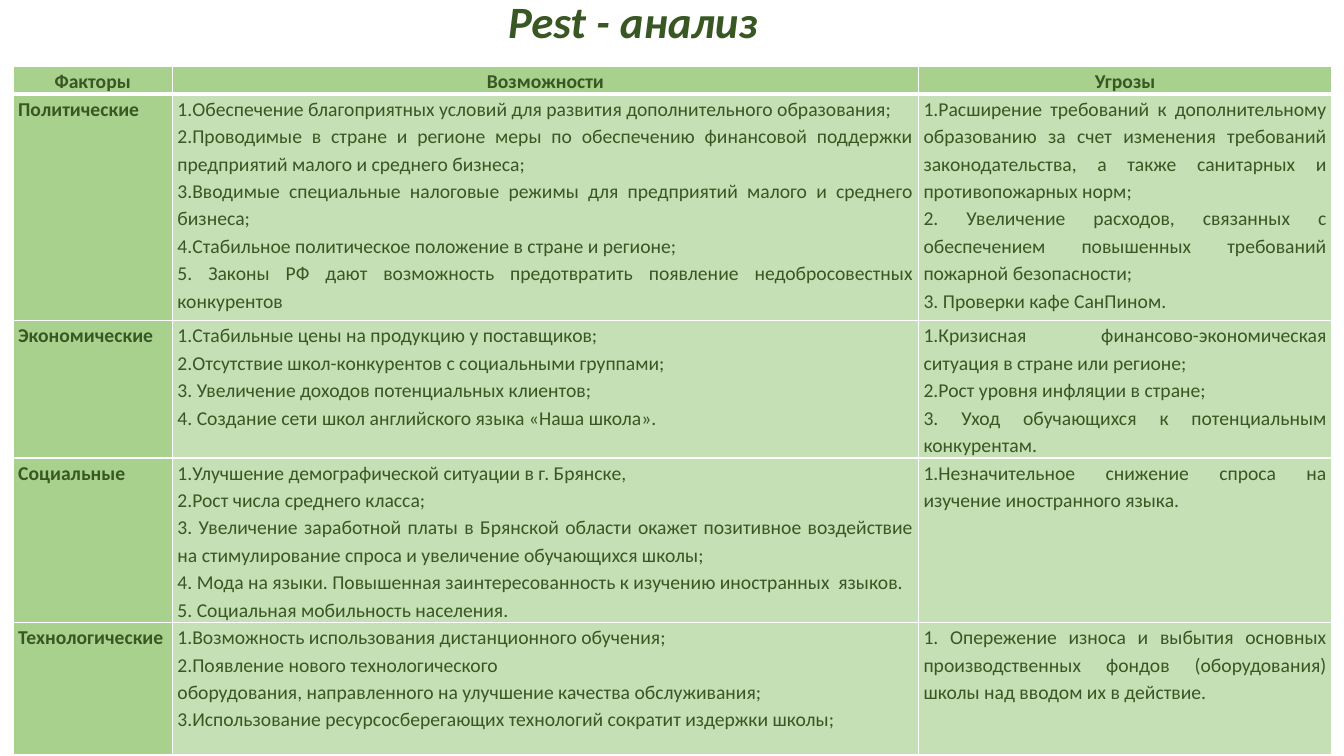
from dataclasses import dataclass

from lxml.etree import SubElement
from pptx import Presentation
from pptx.dml.color import RGBColor as RGB
from pptx.enum.text import MSO_ANCHOR as Anchor, MSO_AUTO_SIZE as AutoSize, PP_ALIGN as Align
from pptx.oxml.ns import qn
from pptx.util import Inches, Pt


@dataclass(frozen=True)
class Theme:
    font: str = "Calibri"
    ink: str = "385723"
    strong_fill: str = "A9D18E"
    soft_fill: str = "C5E0B4"
    border: str = "FFFFFF"
    title_size: int = 32
    body_size: int = 14
    thin: int = 1
    thick: int = 3


THEME = Theme()
SLIDE_W, SLIDE_H = 13.33, 7.5

# Table grid in inches
TABLE_LEFT, TABLE_TOP = 0.13, 0.66
COLUMNS = [1.58, 7.4, 4.1]
ROWS = [0.19, 2.25] + [1.31] * 3

HEADERS = ["Факторы", "Возможности", "Угрозы"]

# Factor, opportunities, threats
FACTORS = [
    ("Политические",
     ["1.Обеспечение благоприятных условий для развития дополнительного образования;",
      "2.Проводимые в стране и регионе меры по обеспечению финансовой поддержки "
      "предприятий малого и среднего бизнеса;",
      "3.Вводимые специальные налоговые режимы для предприятий малого и среднего бизнеса;",
      "4.Стабильное политическое положение в стране и регионе;",
      "5. Законы РФ дают возможность предотвратить появление недобросовестных конкурентов"],
     ["1.Расширение требований к дополнительному образованию за счет изменения требований "
      "законодательства, а также санитарных и противопожарных норм;",
      "2. Увеличение расходов, связанных с обеспечением повышенных требований "
      "пожарной безопасности;",
      "3. Проверки кафе СанПином."]),
    ("Экономические",
     ["1.Стабильные цены на продукцию у поставщиков;",
      "2.Отсутствие школ-конкурентов с социальными группами;",
      "3. Увеличение доходов потенциальных клиентов;",
      "4. Создание сети школ английского языка «Наша школа»."],
     ["1.Кризисная финансово-экономическая ситуация в стране или регионе;",
      "2.Рост уровня инфляции в стране;",
      "3. Уход обучающихся к потенциальным конкурентам."]),
    ("Социальные",
     ["1.Улучшение демографической ситуации в г. Брянске,",
      "2.Рост числа среднего класса;",
      "3. Увеличение заработной платы в Брянской области окажет позитивное воздействие "
      "на стимулирование спроса и увеличение обучающихся школы;",
      "4. Мода на языки. Повышенная заинтересованность к изучению иностранных  языков.",
      "5. Социальная мобильность населения."],
     ["1.Незначительное снижение спроса на изучение иностранного языка."]),
    ("Технологические",
     ["1.Возможность использования дистанционного обучения;",
      "2.Появление нового технологического",
      "оборудования, направленного на улучшение качества обслуживания;",
      "3.Использование ресурсосберегающих технологий сократит издержки школы;"],
     ["1. Опережение износа и выбытия основных производственных фондов (оборудования) "
      "школы над вводом их в действие."]),
]


def write_text(tf, lines, size=THEME.body_size, bold=False, italic=False,
               align=Align.JUSTIFY, spacing=1.15):
    """Fill a text frame, one paragraph per line."""
    for i, line in enumerate(lines):
        p = tf.paragraphs[0] if i == 0 else tf.add_paragraph()
        p.alignment, p.line_spacing = align, spacing
        p.space_before = p.space_after = Pt(0)
        r = p.add_run()
        r.text = line
        font = r.font
        font.name, font.size, font.bold, font.italic = THEME.font, Pt(size), bold, italic
        font.color.rgb = RGB.from_string(THEME.ink)


def set_borders(cell, top, bottom):
    """Draw the four cell borders, widths in points."""
    tc_pr = cell._tc.get_or_add_tcPr()
    widths = {"a:lnL": THEME.thin, "a:lnR": THEME.thin, "a:lnT": top, "a:lnB": bottom}
    for tag, width in widths.items():
        ln = SubElement(tc_pr, qn(tag), w=str(Pt(width)))
        SubElement(SubElement(ln, qn("a:solidFill")), qn("a:srgbClr"), val=THEME.border)


def fill_cell(cell, lines, row, col):
    """Header row and factor column are strong; the rest is soft."""
    strong = row == 0 or col == 0
    cell.margin_left = cell.margin_right = Inches(0.05)
    cell.margin_top = cell.margin_bottom = 0
    set_borders(cell, top=THEME.thick if row == 1 else THEME.thin,
                bottom=THEME.thick if row == 0 else THEME.thin)
    cell.fill.solid()
    cell.fill.fore_color.rgb = RGB.from_string(THEME.strong_fill if strong else THEME.soft_fill)
    write_text(cell.text_frame, lines, bold=strong,
               align=Align.CENTER if row == 0 else Align.JUSTIFY)


def add_title(s, text):
    title = s.shapes.title
    title.left, title.top = Inches(4.94), Inches(-0.18)
    title.width, title.height = Inches(3.46), Inches(0.84)
    tf = title.text_frame
    tf.word_wrap, tf.auto_size, tf.vertical_anchor = True, AutoSize.NONE, Anchor.MIDDLE
    write_text(tf, [text], size=THEME.title_size, bold=True, italic=True,
               align=Align.LEFT, spacing=0.9)


def add_factor_table(s):
    table = s.shapes.add_table(len(ROWS), len(COLUMNS), Inches(TABLE_LEFT), Inches(TABLE_TOP),
                               Inches(sum(COLUMNS)), Inches(sum(ROWS))).table
    for column, width in zip(table.columns, COLUMNS):
        column.width = Inches(width)
    for row, height in zip(table.rows, ROWS):
        row.height = Inches(height)
    content = [[[header] for header in HEADERS]]
    content += [[[factor], chances, threats] for factor, chances, threats in FACTORS]
    for i, row in enumerate(content):
        for j, lines in enumerate(row):
            fill_cell(table.cell(i, j), lines, i, j)


def main():
    prs = Presentation()
    prs.slide_width, prs.slide_height = Inches(SLIDE_W), Inches(SLIDE_H)
    s = prs.slides.add_slide(prs.slide_layouts.get_by_name("Title Only"))
    add_title(s, "Pest - анализ")
    add_factor_table(s)
    prs.save("out.pptx")


if __name__ == "__main__":
    main()
